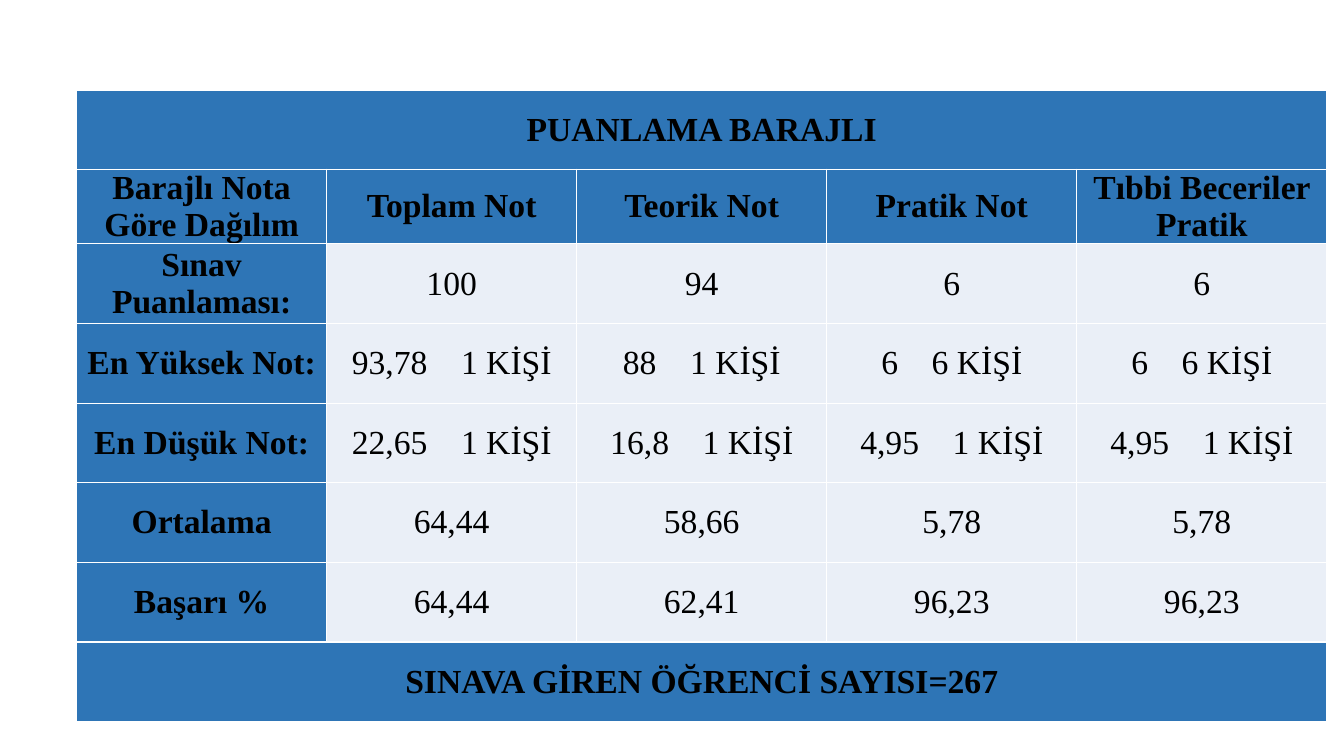
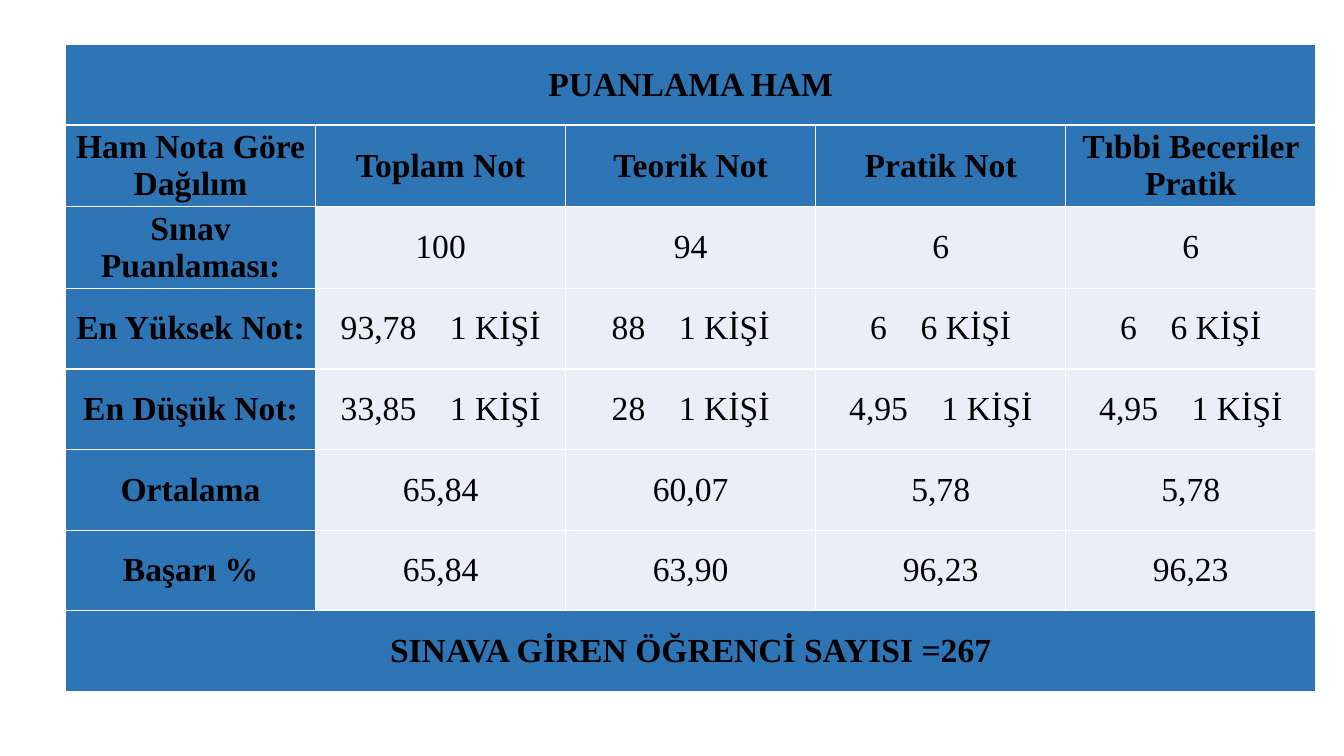
from dataclasses import dataclass

from lxml.etree import SubElement
from pptx import Presentation
from pptx.dml.color import RGBColor
from pptx.enum.text import MSO_ANCHOR, PP_ALIGN
from pptx.oxml.ns import qn
from pptx.util import Emu, Pt

# Content: each score row is a label and its values; a pair is (score, head count)
COLUMN_HEADS = ["Toplam Not", "Teorik Not", "Pratik Not", "Tıbbi Beceriler Pratik"]
FULL_MARKS = ["Sınav Puanlaması:", "100", "94", "6", "6"]
HIGHEST = ["En Yüksek Not:", ("93,78", "1 KİŞİ"), ("88", "1 KİŞİ"),
           ("6", "6 KİŞİ"), ("6", "6 KİŞİ")]
LOWEST_PRACTICAL = ("4,95", "1 KİŞİ")

SCORE_TABLES = [
    {
        "left": 76, "top": 90, "row_heights": [78, 74] + [79] * 6,
        "title": "PUANLAMA BARAJLI",
        "corner": "Barajlı Nota Göre Dağılım",
        "lowest": [("22,65", "1 KİŞİ"), ("16,8", "1 KİŞİ")],
        "average": ["64,44", "58,66", "5,78", "5,78"],
        "success": ["64,44", "62,41", "96,23", "96,23"],
        "attendance": "SINAVA GİREN ÖĞRENCİ SAYISI=267",
    },
    {
        "left": 65, "top": 44, "row_heights": [80, 81, 81] + [80] * 5,
        "title": "PUANLAMA HAM",
        "corner": "Ham Nota Göre Dağılım",
        "lowest": [("33,85", "1 KİŞİ"), ("28", "1 KİŞİ")],
        "average": ["65,84", "60,07", "5,78", "5,78"],
        "success": ["65,84", "63,90", "96,23", "96,23"],
        "attendance": "SINAVA GİREN ÖĞRENCİ SAYISI =267",
    },
]

SLIDE_WIDTH, SLIDE_HEIGHT = 1333, 750
COLUMN_WIDTH = 248


@dataclass(frozen=True)
class Theme:
    font: str = "Times New Roman"
    size: int = 24
    text: str = "000000"
    head_fill: str = "2E75B6"
    value_fill: str = "EAEFF7"
    border: str = "FFFFFF"
    border_width: int = 1
    pair_gap: int = 18  # points added to the space between score and head count


THEME = Theme()


def px(length):
    """100 px to the inch."""
    return Emu(length * 9144)


def table_rows(content):
    return [
        [content["title"]],
        [content["corner"], *COLUMN_HEADS],
        FULL_MARKS,
        HIGHEST,
        ["En Düşük Not:", *content["lowest"], LOWEST_PRACTICAL, LOWEST_PRACTICAL],
        ["Ortalama", *content["average"]],
        ["Başarı %", *content["success"]],
        [content["attendance"]],
    ]


def write_value(paragraph, value):
    if isinstance(value, str):
        paragraph.text = value
        return
    score, head_count = value
    for part in (score, " ", head_count):
        paragraph.add_run().text = part
    gap = paragraph.runs[1].font
    gap.size = Pt(THEME.size)
    paragraph.runs[1]._r.get_or_add_rPr().set("spc", str(THEME.pair_gap * 100))


def style_cell(cell, is_head):
    # Borders come before the fill in the cell properties
    properties = cell._tc.get_or_add_tcPr()
    for side in ("a:lnL", "a:lnR", "a:lnT", "a:lnB"):
        line = SubElement(properties, qn(side), w=str(Pt(THEME.border_width)))
        SubElement(SubElement(line, qn("a:solidFill")), qn("a:srgbClr"), val=THEME.border)
    cell.fill.solid()
    cell.fill.fore_color.rgb = RGBColor.from_string(
        THEME.head_fill if is_head else THEME.value_fill)
    cell.margin_left = cell.margin_right = cell.margin_top = cell.margin_bottom = 0
    cell.vertical_anchor = MSO_ANCHOR.MIDDLE
    paragraph = cell.text_frame.paragraphs[0]
    paragraph.alignment = PP_ALIGN.CENTER
    paragraph.font.size = Pt(THEME.size)
    for run in paragraph.runs:
        run.font.name = THEME.font
        run.font.size = Pt(THEME.size)
        run.font.bold = is_head
        run.font.color.rgb = RGBColor.from_string(THEME.text)


def add_score_table(slide, content):
    rows = table_rows(content)
    heights = content["row_heights"]
    column_count = len(COLUMN_HEADS) + 1
    scores = slide.shapes.add_table(
        len(rows), column_count, px(content["left"]), px(content["top"]),
        px(COLUMN_WIDTH * column_count), px(sum(heights))).table
    scores.first_row = scores.horz_banding = False
    for column in scores.columns:
        column.width = px(COLUMN_WIDTH)

    for row_index, (values, height) in enumerate(zip(rows, heights)):
        scores.rows[row_index].height = px(height)
        is_band = len(values) == 1
        if is_band:
            scores.cell(row_index, 0).merge(scores.cell(row_index, column_count - 1))
        for column_index, value in enumerate(values):
            write_value(scores.cell(row_index, column_index).text_frame.paragraphs[0], value)
        for column_index in range(column_count):
            is_head = is_band or row_index == 1 or column_index == 0
            style_cell(scores.cell(row_index, column_index), is_head)


def main():
    presentation = Presentation()
    presentation.slide_width = px(SLIDE_WIDTH)
    presentation.slide_height = px(SLIDE_HEIGHT)
    blank_layout = presentation.slide_layouts[6]
    for content in SCORE_TABLES:
        add_score_table(presentation.slides.add_slide(blank_layout), content)
    presentation.save("out.pptx")


if __name__ == "__main__":
    main()
